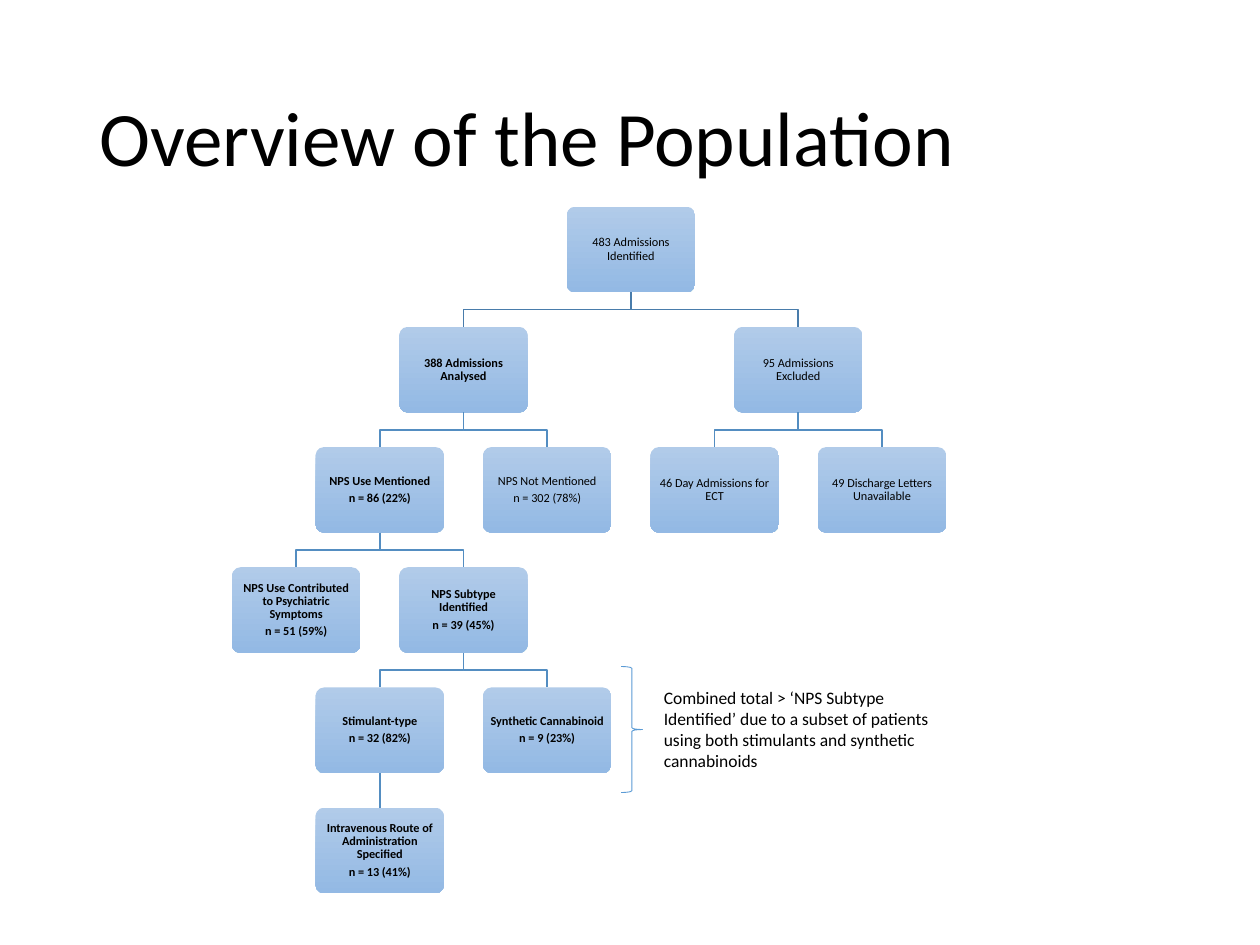
from lxml import etree
from pptx import Presentation
from pptx.dml.color import RGBColor
from pptx.enum.shapes import MSO_CONNECTOR, MSO_SHAPE
from pptx.enum.text import MSO_ANCHOR, PP_ALIGN
from pptx.oxml.ns import qn
from pptx.util import Inches, Pt

ROUND_RECT, BRACE = MSO_SHAPE.ROUNDED_RECTANGLE, MSO_SHAPE.RIGHT_BRACE
STRAIGHT = MSO_CONNECTOR.STRAIGHT
MIDDLE, CENTER = MSO_ANCHOR.MIDDLE, PP_ALIGN.CENTER

TITLE = "Overview of the Population"
NOTE = ("Combined total > ‘NPS Subtype Identified’ due to a subset of patients "
        "using both stimulants and synthetic cannabinoids")

# key: (parent, column, row, bold, lines)
BOXES = {
    "identified": (None, 4, 0, False, ["483 Admissions Identified"]),
    "analysed": ("identified", 2, 1, True, ["388 Admissions Analysed"]),
    "excluded": ("identified", 6, 1, False, ["95 Admissions Excluded"]),
    "use": ("analysed", 1, 2, True, ["NPS Use Mentioned", "n = 86 (22%)"]),
    "no use": ("analysed", 3, 2, False, ["NPS Not Mentioned", "n = 302 (78%)"]),
    "ect": ("excluded", 5, 2, False, ["46 Day Admissions for ECT"]),
    "letters": ("excluded", 7, 2, False, ["49 Discharge Letters Unavailable"]),
    "contributed": ("use", 0, 3, True,
                    ["NPS Use Contributed to Psychiatric Symptoms", "n = 51 (59%)"]),
    "subtype": ("use", 2, 3, True, ["NPS Subtype Identified", "n = 39 (45%)"]),
    "stimulant": ("subtype", 1, 4, True, ["Stimulant-type", "n = 32 (82%)"]),
    "cannabinoid": ("subtype", 3, 4, True, ["Synthetic Cannabinoid", "n = 9 (23%)"]),
    "intravenous": ("stimulant", 1, 5, True,
                    ["Intravenous Route of Administration Specified", "n = 13 (41%)"]),
}

# Grid: centre of the first column, top of the first row, and equal steps
BOX_W, BOX_H = 1.02, 0.68
FIRST_X, COL_STEP = 2.35, (7 - 2.35) / 7
FIRST_Y, ROW_STEP = 1.64, (6.41 - 1.64) / 5


def color(hex_code):
    return RGBColor.from_string(hex_code)


def write(shape, lines, size, bold=False):
    tf = shape.text_frame
    tf.word_wrap = True
    tf.text = "\n".join(lines)
    for p in tf.paragraphs:
        for r in p.runs:
            r.font.name, r.font.size, r.font.bold = "Calibri", Pt(size), bold
            r.font.color.rgb = color("000000")
    return tf


def position(key):
    """Centre x, top and bottom of a box, in inches."""
    _, col, row, _, _ = BOXES[key]
    top = FIRST_Y + row * ROW_STEP
    return FIRST_X + col * COL_STEP, top, top + BOX_H


def add_box(key):
    x, top, _ = position(key)
    bold, lines = BOXES[key][3:]
    sp = s.shapes.add_shape(ROUND_RECT, Inches(x - BOX_W / 2), Inches(top),
                            Inches(BOX_W), Inches(BOX_H))
    sp.adjustments[0] = 0.1
    sp.shadow.inherit = False
    sp.line.fill.background()
    sp.fill.gradient()
    sp.fill.gradient_angle = 270
    for stop, hex_code in zip(sp.fill.gradient_stops, ("B1CBE9", "93B9E4")):
        stop.color.rgb = color(hex_code)
    tf = write(sp, lines, 7, bold)
    tf.vertical_anchor = MIDDLE
    tf.margin_left = tf.margin_right = Inches(0.03)
    tf.margin_top = tf.margin_bottom = Inches(0.05)
    for p in tf.paragraphs:
        p.alignment, p.line_spacing, p.space_after = CENTER, 0.9, Pt(2.45)
    return sp


def add_link(parent, child):
    x1, _, y1 = position(parent)
    x2, y2, _ = position(child)
    if x1 == x2:
        link = s.shapes.add_connector(STRAIGHT, Inches(x1), Inches(y1),
                                      Inches(x2), Inches(y2))
        link.begin_connect(boxes[parent], 2)
        link.end_connect(boxes[child], 0)
        etree.SubElement(link._element.spPr, qn("a:effectLst"))
    else:
        mid = (y1 + y2) / 2
        fb = s.shapes.build_freeform(Inches(x1), Inches(y1))
        fb.add_line_segments([(Inches(x), Inches(y)) for x, y in
                              ((x1, mid), (x2, mid), (x2, y2))], close=False)
        link = fb.convert_to_shape()
        link.shadow.inherit = False
        link.fill.background()
    link.line.color.rgb = color("497CAB" if parent == "identified" else "538DC1")
    link.line.width = Pt(1)


prs = Presentation()
prs.slide_width, prs.slide_height = Inches(10), Inches(7.5)
s = prs.slides.add_slide(prs.slide_layouts[6])

# Title
title = s.shapes.add_textbox(Inches(0.69), Inches(0.4), Inches(8.62), Inches(1.45))
tf = write(title, [TITLE], 44)
tf.vertical_anchor = MIDDLE
tf.paragraphs[0].line_spacing = 0.9

# Tree of admissions
boxes = {key: add_box(key) for key in BOXES}
for key, (parent, *_) in BOXES.items():
    if parent:
        add_link(parent, key)

# Note beside the subtype counts
note = s.shapes.add_textbox(Inches(5.17), Inches(5.4), Inches(2.31), Inches(0.77))
write(note, [NOTE], 10)
brace = s.shapes.add_shape(BRACE, Inches(4.93), Inches(5.29), Inches(0.17), Inches(1))
brace.shadow.inherit = False
brace.fill.background()
brace.line.color.rgb = color("5B9BD5")
brace.line.width = Pt(0.5)

prs.save("out.pptx")
